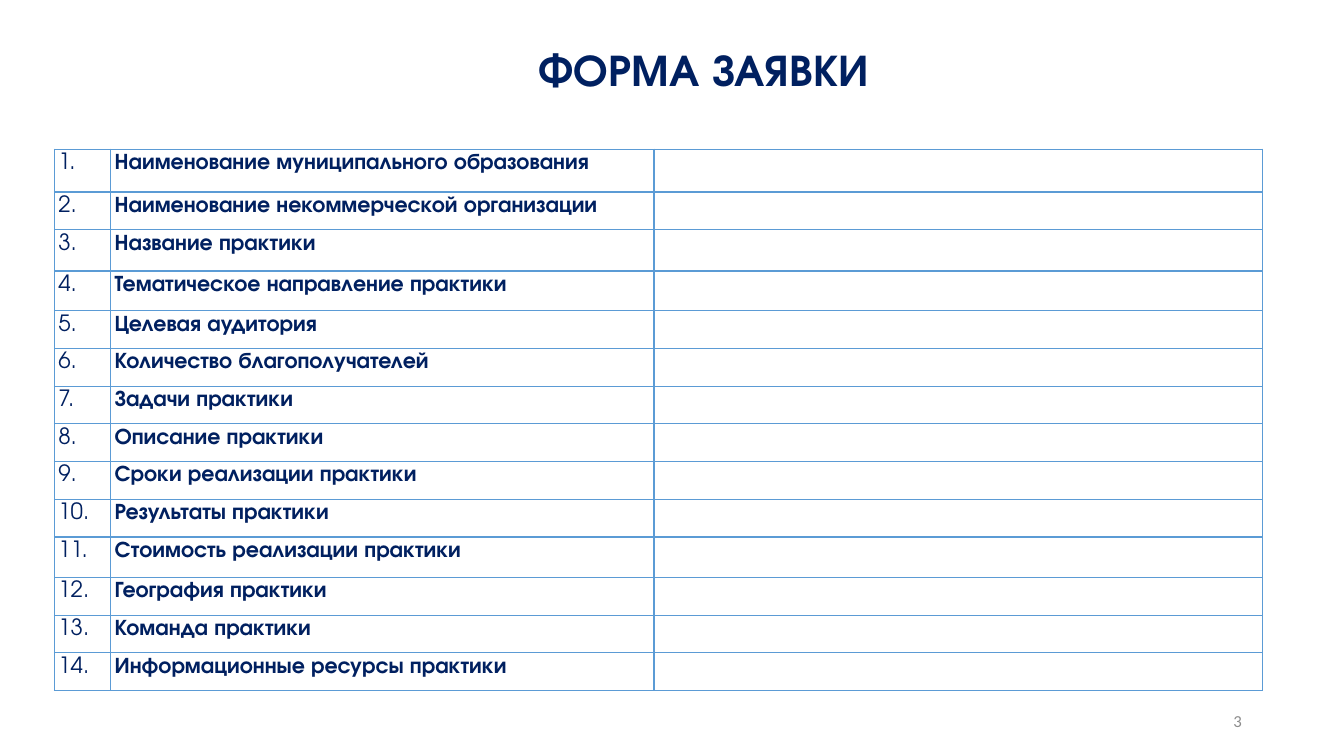
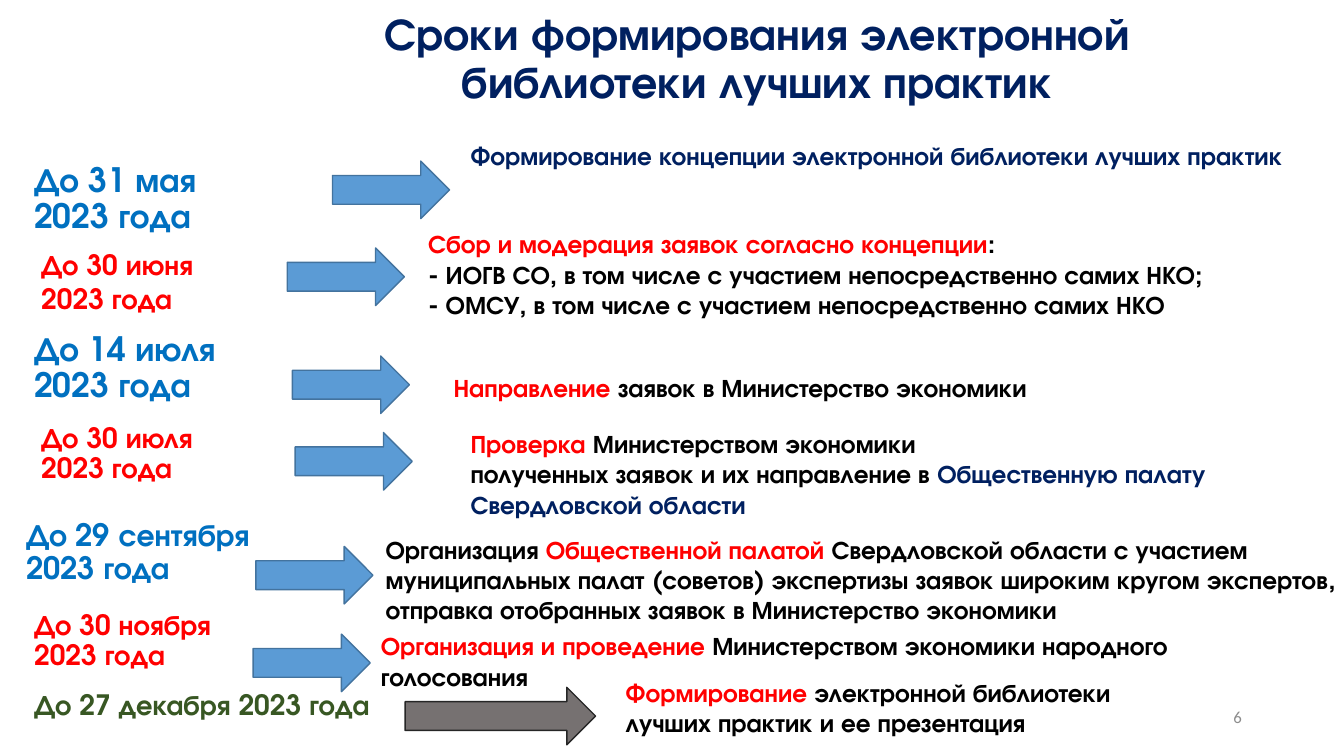
"""Builds two slides: an application form and a timeline of the practice library."""
from collections import namedtuple

from lxml import etree
from pptx import Presentation
from pptx.dml.color import RGBColor
from pptx.enum.shapes import MSO_SHAPE
from pptx.enum.text import MSO_ANCHOR, PP_ALIGN
from pptx.oxml.ns import qn
from pptx.util import Cm, Pt

RIGHT_ARROW = MSO_SHAPE.RIGHT_ARROW
TOP, MIDDLE, BOTTOM = MSO_ANCHOR.TOP, MSO_ANCHOR.MIDDLE, MSO_ANCHOR.BOTTOM
LEFT, CENTER, RIGHT = PP_ALIGN.LEFT, PP_ALIGN.CENTER, PP_ALIGN.RIGHT

FONT, NUMBER_FONT = "TeX Gyre Adventor", "Calibri"
NAVY, BLUE, RED, GREEN, BLACK = "002060", "0070C0", "FF0000", "385723", "000000"
GRAY, SKY, SKY_EDGE = "8C8C8C", "5B9BD5", "43739E"
STONE, STONE_EDGE = "767171", "262626"

FORM_FIELDS = [
    "Наименование муниципального образования",
    "Наименование некоммерческой организации",
    "Название практики",
    "Тематическое направление практики",
    "Целевая аудитория",
    "Количество благополучателей",
    "Задачи практики",
    "Описание практики",
    "Сроки реализации практики",
    "Результаты практики",
    "Стоимость реализации практики",
    "География практики",
    "Команда практики",
    "Информационные ресурсы практики",
]
FORM_COLUMNS = (1.42, 13.69, 15.34)
ROW_HEIGHT = 0.95
TALL_ROWS = {0: 1.08, 2: 1.04, 3: 1.0, 10: 1.02}

Date = namedtuple("Date", "lines size color dy spacing", defaults=(0.9,))
Arrow = namedtuple("Arrow", "dx dy width fill edge", defaults=(2.95, SKY, SKY_EDGE))
Task = namedtuple("Task", "dx dy paragraphs")

MILESTONES = [
    ((0.61, 3.4, 32.64, 2.4),
     Date(["До 31 мая", "2023 года"], 24, BLUE, 0.59),
     Arrow(7.77, 0.66),
     Task(11, 0, [[("Формирование концепции электронной библиотеки лучших практик", NAVY)]])),
    ((0.79, 5.64, 32.43, 2.56),
     Date(["До 30 июня", "2023 года"], 20, RED, 0.48, 1.0),
     Arrow(6.45, 0.61),
     Task(9.75, 0, [
         [("Сбор и модерация заявок согласно концепции", RED), (":", BLACK)],
         [("- ИОГВ СО, в том числе с участием непосредственно самих НКО;", BLACK)],
         [("- ОМСУ, в том числе с участием непосредственно самих НКО", BLACK)]])),
    ((0.61, 8.25, 33.25, 2.1),
     Date(["До 14 июля", "2023 года"], 24, BLUE, 0),
     Arrow(6.76, 0.72),
     Task(10.57, 1, [[("Направление ", RED), ("заявок в Министерство экономики", BLACK)]])),
    ((0.79, 10.57, 32.66, 2.66),
     Date(["До 30 июля", "2023 года"], 20, RED, 0),
     Arrow(6.65, 0.33),
     Task(10.82, 0.1, [
         [("Проверка ", RED), ("Министерством экономики", BLACK)],
         [("полученных заявок и их направление в ", BLACK),
          ("Общественную палату Свердловской области", NAVY)]])),
    ((0.41, 12.98, 33.96, 2.92),
     Date(["До 29 сентября", "2023 года"], 22, BLUE, 0),
     Arrow(6.04, 0.79),
     Task(9.06, 0.36, [
         [("Организация ", BLACK), ("Общественной палатой ", RED),
          ("Свердловской области с участием муниципальных палат (советов) экспертизы "
           "заявок широким кругом экспертов, отправка отобранных заявок "
           "в Министерство экономики", BLACK)]])),
    ((0.61, 15.27, 31.42, 2.3),
     Date(["До 30 ноября", "2023 года"], 20, RED, 0),
     Arrow(5.77, 0.71),
     Task(8.74, 0.5, [
         [("Организация и проведение ", RED),
          ("Министерством экономики народного голосования", BLACK)]])),
    ((0.61, 16.94, 30.05, 1.78),
     Date(["До 27 декабря 2023 года"], 20, GREEN, 0.26, 1.0),
     Arrow(9.6, 0.38, 4.8, STONE, STONE_EDGE),
     Task(14.91, 0, [
         [("Формирование ", RED), ("электронной библиотеки", BLACK)],
         [("лучших практик и ее презентация", BLACK)]])),
]


def rgb(value):
    """Turn a hex string into a colour."""
    return RGBColor.from_string(value)


def add_run(p, text, size, color, bold=True, font=FONT):
    """Append a formatted run to a paragraph."""
    r = p.add_run()
    r.text = text
    r.font.name, r.font.size, r.font.bold = font, Pt(size), bold
    r.font.color.rgb = rgb(color)


def add_text(s, box, paragraphs, size, anchor=TOP, align=LEFT, spacing=1.0,
             bold=True, font=FONT):
    """Place a text box holding paragraphs of (text, colour) runs."""
    tf = s.shapes.add_textbox(*map(Cm, box)).text_frame
    tf.word_wrap = True
    tf.vertical_anchor = anchor
    for i, runs in enumerate(paragraphs):
        p = tf.add_paragraph() if i else tf.paragraphs[0]
        p.alignment, p.line_spacing = align, spacing
        for text, color in runs:
            add_run(p, text, size, color, bold, font)


def add_page(prs, title, title_box, number, number_top):
    """Add a blank slide with the shared title and page number."""
    s = prs.slides.add_slide(prs.slide_layouts[6])
    add_text(s, title_box, [[(title, NAVY)]], 32, BOTTOM, CENTER, 0.9)
    add_text(s, (23.93, number_top, 7.62, 1.02), [[(number, GRAY)]], 12, MIDDLE,
             RIGHT, bold=False, font=NUMBER_FONT)
    return s


def style_cell(cell):
    """Give a form cell its margins, thin borders and no fill."""
    cell.margin_left = cell.margin_right = cell.margin_top = Cm(0.1)
    cell.margin_bottom = Cm(0.15)
    tc_pr = cell._tc.get_or_add_tcPr()
    for side in ("a:lnL", "a:lnR", "a:lnT", "a:lnB"):
        ln = etree.SubElement(tc_pr, qn(side), w=str(Pt(1)))
        fill = etree.SubElement(ln, qn("a:solidFill"))
        etree.SubElement(fill, qn("a:srgbClr"), val=SKY)
    cell.fill.background()


def add_form(s, left, top):
    """Place the numbered form table with an empty answer column."""
    heights = [TALL_ROWS.get(i, ROW_HEIGHT) for i in range(len(FORM_FIELDS))]
    box = (left, top, sum(FORM_COLUMNS), sum(heights))
    table = s.shapes.add_table(len(heights), len(FORM_COLUMNS), *map(Cm, box)).table
    table.first_row = table.horz_banding = False
    for column, width in zip(table.columns, FORM_COLUMNS):
        column.width = Cm(width)
    for i, (row, height, field) in enumerate(zip(table.rows, heights, FORM_FIELDS), 1):
        row.height = Cm(height)
        number, name, answer = row.cells
        for cell in (number, name, answer):
            style_cell(cell)
        add_run(number.text_frame.paragraphs[0], f"{i}.", 16, NAVY, bold=False)
        add_run(name.text_frame.paragraphs[0], field, 16, NAVY)
        p = answer.text_frame.paragraphs[0]
        etree.SubElement(p._p, qn("a:endParaRPr"), sz="1200")


def add_arrow(s, box, fill, edge):
    """Place a right block arrow."""
    sp = s.shapes.add_shape(RIGHT_ARROW, *map(Cm, box))
    sp.shadow.inherit = False
    sp.fill.solid()
    sp.fill.fore_color.rgb = rgb(fill)
    sp.line.color.rgb = rgb(edge)
    sp.line.width = Pt(1)


def add_milestone(s, box, date, arrow, task):
    """Place a date, an arrow and a task inside the given row box."""
    left, top, width, height = box
    add_text(s, (left, top + date.dy, arrow.dx + 0.5, height - date.dy),
             [[(line, date.color)] for line in date.lines], date.size,
             spacing=date.spacing)
    add_arrow(s, (left + arrow.dx, top + arrow.dy, arrow.width, 1.45),
              arrow.fill, arrow.edge)
    add_text(s, (left + task.dx, top + task.dy, width - task.dx, height - task.dy),
             task.paragraphs, 18)


def build_form_slide(prs):
    """Build the application form slide."""
    s = add_page(prs, "ФОРМА ЗАЯВКИ", (7.75, 0.89, 19.99, 1.65), "3", 17.65)
    add_form(s, 1.37, 3.76)


def build_timeline_slide(prs):
    """Build the slide of deadlines."""
    s = add_page(prs, "Сроки формирования электронной библиотеки лучших практик",
                 (7.54, 0.23, 23.09, 2.62), "6", 17.55)
    for milestone in MILESTONES:
        add_milestone(s, *milestone)


def main():
    """Build and save the presentation."""
    prs = Presentation()
    prs.slide_width, prs.slide_height = Cm(33.87), Cm(19.05)
    build_form_slide(prs)
    build_timeline_slide(prs)
    prs.save("out.pptx")


if __name__ == "__main__":
    main()
